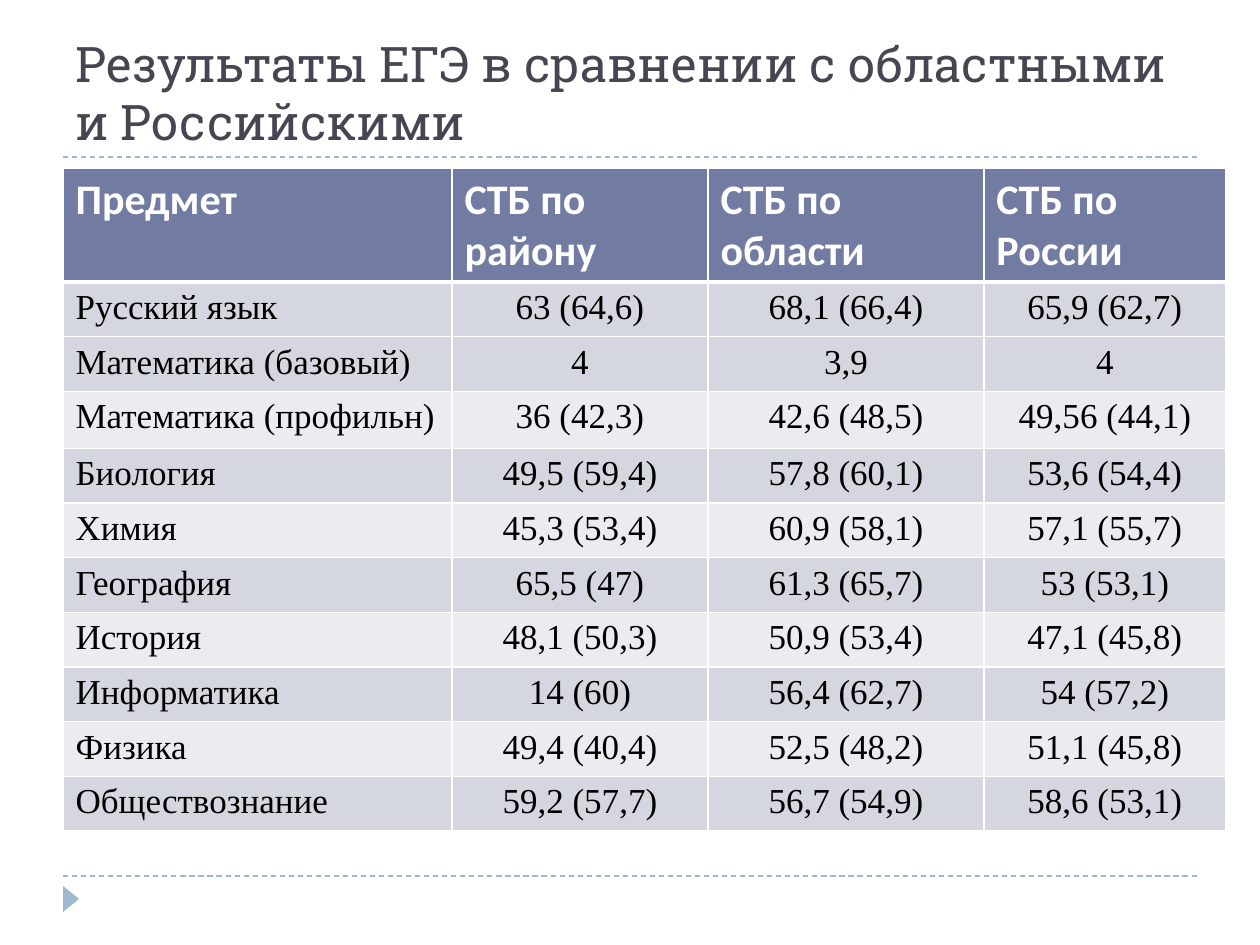
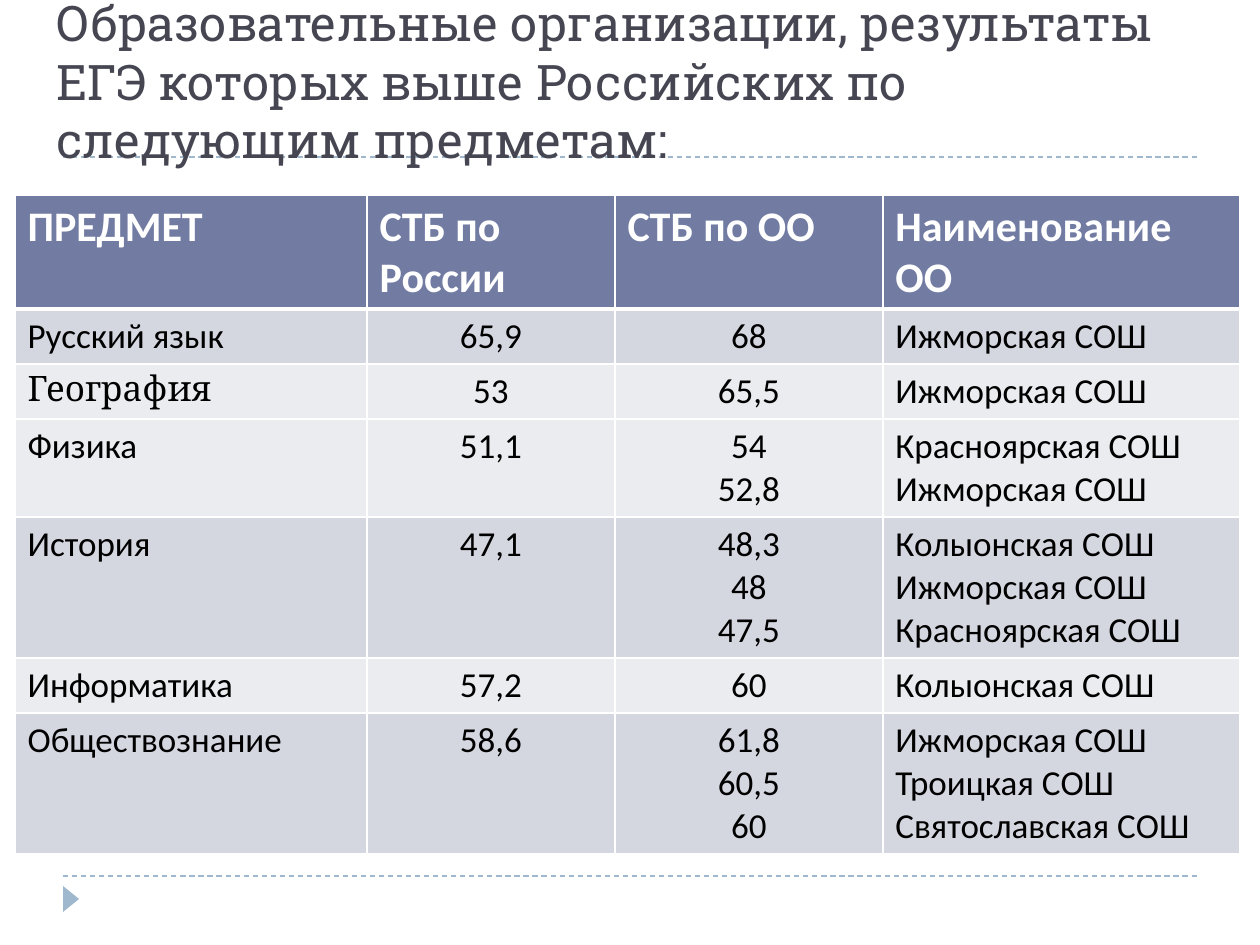
"""Builds two slides of tables that compare exam results."""

from dataclasses import dataclass, field

from lxml import etree
from pptx import Presentation
from pptx import util as u
from pptx.dml.color import RGBColor
from pptx.enum import dml, shapes, text
from pptx.oxml import ns

SCALE = 914400 / 126
WIDTH, HEIGHT = 1260, 945

WHITE = RGBColor(0xFF, 0xFF, 0xFF)
BLACK = RGBColor(0x00, 0x00, 0x00)
TITLE_COLOR = RGBColor(0x46, 0x46, 0x53)
ACCENT = RGBColor(0x9F, 0xB8, 0xCD)
HEADER_FILL = RGBColor(0x72, 0x7C, 0xA3)
DARK = RGBColor(0xD5, 0xD7, 0xE0)
LIGHT = RGBColor(0xEB, 0xEC, 0xF0)

TITLE_FONT, HEADER_FONT = "Roboto Slab", "Calibri"
RULE_LEFT, RULE_RIGHT = 63, 1197
RULE_LEVELS = (876, 157)
CELL_PADDING, HEADER_LINE = 12, 51


@dataclass(frozen=True)
class Box:
    """A rectangle in px."""

    left: int
    top: int
    width: int
    height: int

    def emu(self) -> tuple[int, ...]:
        """Return the rectangle in EMU."""
        return tuple(px(side) for side in (self.left, self.top, self.width, self.height))


@dataclass(frozen=True)
class Row:
    """A table row with its band colour and any extra height."""

    values: tuple[str, ...]
    fill: RGBColor
    extra: int = 0


@dataclass(frozen=True)
class ResultSlide:
    """A title and the table of results under it."""

    title: str
    title_box: Box
    left: int
    top: int
    columns: tuple[int, ...]
    header: tuple[str, ...]
    rows: tuple[Row, ...]
    font: str
    line_height: int
    centered: tuple[int, ...]
    special_fonts: dict[str, str] = field(default_factory=dict)


RESULT_SLIDES = (
    ResultSlide(
        title="Результаты ЕГЭ в сравнении с областными и Российскими",
        title_box=Box(63, 21, 1134, 136),
        left=63,
        top=168,
        columns=(389, 256, 276, 242),
        header=("Предмет", "СТБ по району", "СТБ по области", "СТБ по России"),
        rows=(
            Row(("Русский язык", "63 (64,6)", "68,1 (66,4)", "65,9 (62,7)"), DARK),
            Row(("Математика (базовый)", "4", "3,9", "4"), DARK),
            Row(("Математика (профильн)", "36 (42,3)", "42,6 (48,5)", "49,56 (44,1)"), LIGHT, 6),
            Row(("Биология", "49,5 (59,4)", "57,8 (60,1)", "53,6 (54,4)"), DARK),
            Row(("Химия", "45,3 (53,4)", "60,9 (58,1)", "57,1 (55,7)"), LIGHT),
            Row(("География", "65,5 (47)", "61,3 (65,7)", "53 (53,1)"), DARK),
            Row(("История", "48,1 (50,3)", "50,9 (53,4)", "47,1 (45,8)"), LIGHT),
            Row(("Информатика", "14 (60)", "56,4 (62,7)", "54 (57,2)"), DARK),
            Row(("Физика", "49,4 (40,4)", "52,5 (48,2)", "51,1 (45,8)"), LIGHT),
            Row(("Обществознание", "59,2 (57,7)", "56,7 (54,9)", "58,6 (53,1)"), DARK),
        ),
        font="Times New Roman",
        line_height=39,
        centered=(1, 2, 3),
    ),
    ResultSlide(
        title="Образовательные организации, результаты ЕГЭ которых выше Российских "
        "по следующим предметам:",
        title_box=Box(44, 16, 1134, 159),
        left=15,
        top=195,
        columns=(352, 248, 268, 357),
        header=("ПРЕДМЕТ", "СТБ по России", "СТБ по ОО", "Наименование ОО"),
        rows=(
            Row(("Русский язык", "65,9", "68", "Ижморская СОШ"), DARK),
            Row(("География", "53", "65,5", "Ижморская СОШ"), LIGHT),
            Row(("Физика", "51,1", "54\n52,8", "Красноярская СОШ Ижморская СОШ"), LIGHT),
            Row(("История", "47,1", "48,3\n48\n47,5",
                 "Колыонская СОШ\nИжморская СОШ\nКрасноярская СОШ"), DARK),
            Row(("Информатика", "57,2", "60", "Колыонская СОШ"), LIGHT),
            Row(("Обществознание", "58,6", "61,8\n60,5\n60",
                 "Ижморская СОШ\nТроицкая СОШ\nСвятославская СОШ"), DARK),
        ),
        font="Calibri",
        line_height=43,
        centered=(1, 2),
        special_fonts={"География": "Cambria"},
    ),
)


def px(length: int) -> int:
    """Turn px into EMU."""
    return round(length * SCALE)


def format_text(text_frame, font: str, size: int, color: RGBColor, bold: bool = False,
                align=text.PP_ALIGN.LEFT) -> None:
    """Format every paragraph and run of a text frame."""
    for paragraph in text_frame.paragraphs:
        paragraph.alignment = align
        for run in paragraph.runs:
            run.font.name = font
            run.font.size = u.Pt(size)
            run.font.bold = bold
            run.font.color.rgb = color


def add_decoration(slide) -> None:
    """Draw the dashed rules and the corner triangle."""
    for level in RULE_LEVELS:
        rule = slide.shapes.add_connector(
            shapes.MSO_CONNECTOR.STRAIGHT,
            px(RULE_LEFT), px(level), px(RULE_RIGHT), px(level))
        rule.line.color.rgb = ACCENT
        rule.line.width = u.Pt(0.75)
        rule.line.dash_style = dml.MSO_LINE.DASH
        etree.SubElement(rule._element.spPr, ns.qn("a:effectLst"))
    triangle = slide.shapes.add_shape(
        shapes.MSO_SHAPE.ISOSCELES_TRIANGLE, *Box(58, 891, 26, 16).emu())
    triangle.rotation = 90
    triangle.shadow.inherit = False
    triangle.fill.solid()
    triangle.fill.fore_color.rgb = ACCENT
    triangle.line.fill.background()


def add_title(slide, title: str, box: Box) -> None:
    """Add a title that stands on the bottom of its box."""
    text_frame = slide.shapes.add_textbox(*box.emu()).text_frame
    text_frame.word_wrap = True
    text_frame.vertical_anchor = text.MSO_ANCHOR.BOTTOM
    text_frame.text = title
    format_text(text_frame, TITLE_FONT, 28, TITLE_COLOR)


def set_borders(cell, top: int, bottom: int) -> None:
    """Give a cell white borders with the given top and bottom widths."""
    properties = cell._tc.get_or_add_tcPr()
    widths = {"lnL": 1, "lnR": 1, "lnT": top, "lnB": bottom}
    for position, (side, width) in enumerate(widths.items()):
        border = etree.Element(ns.qn(f"a:{side}"), w=str(u.Pt(width)))
        fill = etree.SubElement(border, ns.qn("a:solidFill"))
        etree.SubElement(fill, ns.qn("a:srgbClr"), val=str(WHITE))
        properties.insert(position, border)


def fill_cell(cell, value: str, fill: RGBColor) -> None:
    """Set the text and the background of a cell."""
    cell.text_frame.text = value
    cell.fill.solid()
    cell.fill.fore_color.rgb = fill


def add_results(slide, content: ResultSlide) -> None:
    """Add the table of results."""
    heights = [2 * HEADER_LINE + CELL_PADDING]
    for row in content.rows:
        lines = max(len(value.split("\n")) for value in row.values)
        heights.append(lines * content.line_height + CELL_PADDING + row.extra)
    box = Box(content.left, content.top, sum(content.columns), sum(heights))
    table = slide.shapes.add_table(len(heights), len(content.columns), *box.emu()).table
    for column, width in zip(table.columns, content.columns):
        column.width = px(width)
    for table_row, height in zip(table.rows, heights):
        table_row.height = px(height)
    for index, value in enumerate(content.header):
        cell = table.cell(0, index)
        fill_cell(cell, value, HEADER_FILL)
        format_text(cell.text_frame, HEADER_FONT, 24, WHITE, bold=True)
        set_borders(cell, 1, 3)
    for row_index, row in enumerate(content.rows, start=1):
        for index, value in enumerate(row.values):
            cell = table.cell(row_index, index)
            fill_cell(cell, value, row.fill)
            align = text.PP_ALIGN.CENTER if index in content.centered else text.PP_ALIGN.LEFT
            font = content.special_fonts.get(value, content.font)
            format_text(cell.text_frame, font, 20, BLACK, align=align)
            set_borders(cell, 3 if row_index == 1 else 1, 1)


def main() -> None:
    """Build and save the presentation."""
    presentation = Presentation()
    presentation.slide_width, presentation.slide_height = px(WIDTH), px(HEIGHT)
    for content in RESULT_SLIDES:
        slide = presentation.slides.add_slide(presentation.slide_layouts[6])
        add_decoration(slide)
        add_title(slide, content.title, content.title_box)
        add_results(slide, content)
    presentation.save("out.pptx")


if __name__ == "__main__":
    main()
